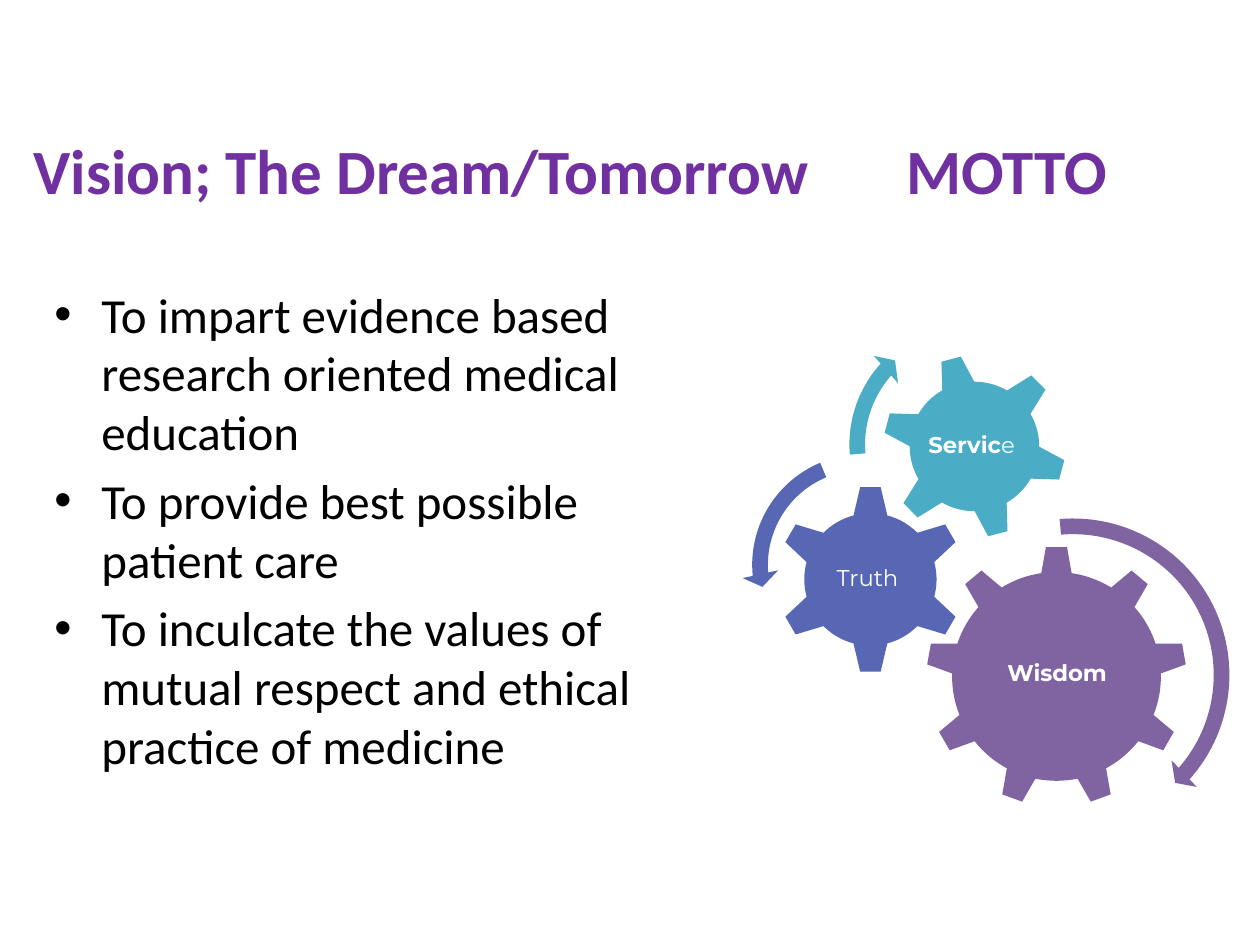
from pptx import Presentation
from pptx.dml.color import RGBColor
from pptx.enum.shapes import MSO_SHAPE as SHAPE
from pptx.enum.text import MSO_ANCHOR as ANCHOR, PP_ALIGN as ALIGN
from pptx.oxml.ns import qn
from pptx.util import Emu, Pt
from lxml.etree import SubElement

PX = 914400 // 126
PURPLE, BLUE, TEAL = "8064A2", "5767B4", "4BACC6"

GEARS = [
    (SHAPE.GEAR_9, (926, 546, 261), PURPLE, 0),
    (SHAPE.GEAR_6, (776, 485, 189), BLUE, 0),
    (SHAPE.GEAR_6, (882, 354, 185), TEAL, -15),
]
LABELS = [
    ((979, 607, 156, 134), [("Wisdom", True)]),
    ((823, 533, 95, 93), [("Truth ", False)]),
    ((922, 394, 105, 105), [("Servic", True), ("e ", False)]),
]
# shape, place, colour, shaft %, head angle, end angle, start angle, head %
ARROWS = [
    (SHAPE.CIRCULAR_ARROW, (906, 508, 334), PURPLE, 4.7, 4.98, 41.58, 265.13, 5.5),
    (SHAPE.LEFT_CIRCULAR_ARROW, (742, 444, 242), BLUE, 6.5, 7.17, 174.82, 247.3, 7.5),
    (SHAPE.CIRCULAR_ARROW, (839, 314, 261), TEAL, 6, 6.57, 221.9, 175.14, 7),
]
GOALS = [
    "To impart evidence based research oriented medical education",
    "To provide best possible patient care",
    "To inculcate the values of mutual respect and ethical practice of medicine",
]


def px(n):
    return Emu(n * PX)


def rgb(color):
    return RGBColor.from_string(color)


def style(r, font, size, color, bold=False):
    r.font.name = font
    r.font.size = Pt(size)
    r.font.bold = bold
    r.font.color.rgb = rgb(color)


def add_solid(s, kind, place, color):
    x, y, size = place
    sp = s.shapes.add_shape(kind, px(x), px(y), px(size), px(size))
    sp.shadow.inherit = False
    sp.fill.solid()
    sp.fill.fore_color.rgb = rgb(color)
    sp.line.fill.background()
    return sp


def add_arrow(s, kind, place, color, shaft, head_angle, end, start, head):
    sp = add_solid(s, kind, place, color)
    values = shaft / 100, head_angle * 0.6, end * 0.6, start * 0.6, head / 100
    for i, value in enumerate(values):
        sp.adjustments[i] = value


def add_box(s, place, anchor):
    tf = s.shapes.add_textbox(*map(px, place)).text_frame
    tf.word_wrap = True
    tf.vertical_anchor = anchor
    return tf


def add_label(s, place, parts):
    tf = add_box(s, place, ANCHOR.MIDDLE)
    tf.margin_left = tf.margin_right = tf.margin_top = tf.margin_bottom = px(2)
    p = tf.paragraphs[0]
    p.alignment = ALIGN.CENTER
    p.line_spacing = 0.9
    for text, bold in parts:
        r = p.add_run()
        r.text = text
        style(r, "Montserrat", 13, "FFFFFF", bold)


def add_title(s, place, text, tab):
    p = add_box(s, place, ANCHOR.MIDDLE).paragraphs[0]
    p.text = text
    for r in p.runs:
        style(r, "Calibri", 36, "7030A0", True)
    tabs = SubElement(p._p.get_or_add_pPr(), qn("a:tabLst"))
    SubElement(tabs, qn("a:tab"), pos=str(px(tab)), algn="l")


def add_bullets(s, place, items):
    tf = add_box(s, place, ANCHOR.TOP)
    tf.text = "\n".join(items)
    for p in tf.paragraphs:
        p.space_before = Pt(5.6)
        style(p.runs[0], "Calibri", 28, "000000")
        pPr = p._p.get_or_add_pPr()
        pPr.set("marL", str(px(47)))
        pPr.set("indent", str(px(-47)))
        SubElement(pPr, qn("a:buFont"), typeface="Arial")
        SubElement(pPr, qn("a:buChar"), char="•")


def main():
    prs = Presentation()
    prs.slide_width, prs.slide_height = px(1260), px(945)
    s = prs.slides.add_slide(prs.slide_layouts[6])
    for kind, place, color, angle in GEARS:
        add_solid(s, kind, place, color).rotation = angle
    for place, parts in LABELS:
        add_label(s, place, parts)
    for arrow in ARROWS:
        add_arrow(s, *arrow)
    add_title(s, (21, 73, 1167, 192), "Vision; The Dream/Tomorrow\tMOTTO", 873)
    add_bullets(s, (42, 278, 640, 604), GOALS)
    prs.save("out.pptx")


if __name__ == "__main__":
    main()
